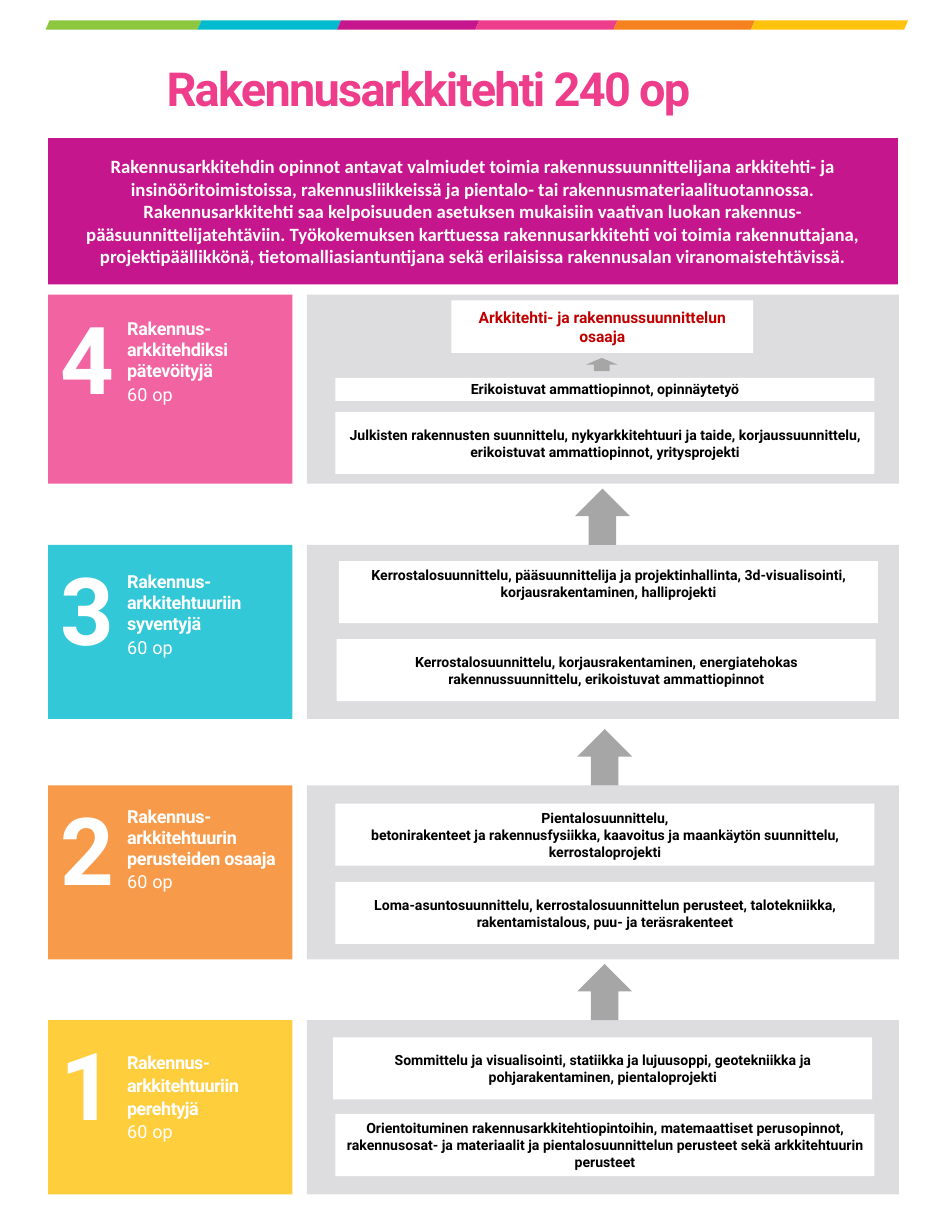
import lxml.etree
import pptx
import pptx.dml.color
import pptx.enum.shapes
import pptx.enum.text
import pptx.oxml.ns
import pptx.util

Cm, Pt = pptx.util.Cm, pptx.util.Pt
SHAPE = pptx.enum.shapes.MSO_SHAPE
ALIGN = pptx.enum.text.PP_ALIGN
ANCHOR = pptx.enum.text.MSO_ANCHOR
qn = pptx.oxml.ns.qn

COLORS = {
    "green": "8DC63F", "cyan": "00BBCE", "purple": "C6168D", "pink": "EE3D8A",
    "orange": "F5821F", "yellow": "FFC20D", "panel": "DDDDDF", "arrow": "A6A6A6",
    "white": "FFFFFF", "black": "000000", "red": "C00000",
}
# Font, colour, letter spacing in hundredths of a point, paragraph format
STYLES = {
    "title": (dict(name="Roboto", size=Pt(30), bold=True), "pink", -110,
              dict(alignment=ALIGN.LEFT)),
    "intro": (dict(name="Calibri", size=Pt(12), bold=True), "white", 0,
              dict(alignment=ALIGN.CENTER)),
    "goal": (dict(name="Roboto", size=Pt(10), bold=True), "red", 0,
             dict(alignment=ALIGN.CENTER)),
    "course": (dict(name="Roboto", size=Pt(9), bold=True), "black", 0,
               dict(alignment=ALIGN.CENTER)),
    "number": (dict(name="Roboto", size=Pt(60), bold=True), "white", -220,
               dict(line_spacing=Pt(70.4))),
    "role": (dict(name="Roboto", size=Pt(11.5), bold=True), "white", -20,
             dict(line_spacing=Pt(13.4))),
    "credits": (dict(name="Roboto", size=Pt(11.5), bold=False), "white", 10,
                dict(line_spacing=Pt(13.5), space_before=Pt(1.8))),
    "first role": (dict(name="Roboto", size=Pt(11.5), bold=True), "white", -30,
                   dict(line_spacing=1.07)),
    "first credits": (dict(name="Roboto", size=Pt(11.5), bold=False), "white", 10,
                      dict(line_spacing=1.07)),
}

deck = pptx.Presentation()
deck.slide_width, deck.slide_height = Cm(21.49), Cm(27.81)
slide = deck.slides.add_slide(deck.slide_layouts[5])


def add_block(kind, box, color, alpha=None):
    block = slide.shapes.add_shape(kind, *map(Cm, box))
    block.shadow.inherit = False
    block.fill.solid()
    block.fill.fore_color.rgb = pptx.dml.color.RGBColor.from_string(COLORS[color])
    block.line.fill.background()
    if alpha:
        tint = block._element.spPr.find(".//" + qn("a:srgbClr"))
        lxml.etree.SubElement(tint, qn("a:alpha")).set("val", str(alpha * 1000))
    return block


def write(frame, lines, **frame_format):
    for key, value in dict(word_wrap=True, **frame_format).items():
        setattr(frame, key, value)
    for i, (text, style) in enumerate(lines):
        font_format, color, spacing, paragraph_format = STYLES[style]
        paragraph = frame.add_paragraph() if i else frame.paragraphs[0]
        for key, value in paragraph_format.items():
            setattr(paragraph, key, value)
        run = paragraph.add_run()
        run.text = text
        for key, value in font_format.items():
            setattr(run.font, key, value)
        run.font.color.rgb = pptx.dml.color.RGBColor.from_string(COLORS[color])
        if spacing:
            run._r.get_or_add_rPr().set("spc", str(spacing))


FLUSH = dict(margin_left=0, margin_top=0, margin_right=0, margin_bottom=0,
             vertical_anchor=ANCHOR.TOP,
             auto_size=pptx.enum.text.MSO_AUTO_SIZE.NONE)

# Title
title = slide.shapes.title
title.left, title.top, title.width, title.height = map(Cm, (3.76, 1.35, 15.67, 1.27))
write(title.text_frame, [("Rakennusarkkitehti 240 op", "title")], **FLUSH)

# Slanted colour band
SLANT, BAND_TOP, BAND_BOTTOM = 0.09, 0.46, 0.67
band_edges = [1.12, 4.55, 7.7, 10.82, 13.94, 17.04, 20.5]
band_colors = ["green", "cyan", "purple", "pink", "orange", "yellow"]
for start, end, color in zip(band_edges, band_edges[1:], band_colors):
    outline = slide.shapes.build_freeform(Cm(start), Cm(BAND_TOP))
    outline.add_line_segments([(Cm(end), Cm(BAND_TOP)),
                               (Cm(end - SLANT), Cm(BAND_BOTTOM)),
                               (Cm(start - SLANT), Cm(BAND_BOTTOM))])
    stripe = outline.convert_to_shape()
    stripe.shadow.inherit = False
    stripe.fill.solid()
    stripe.fill.fore_color.rgb = pptx.dml.color.RGBColor.from_string(COLORS[color])
    stripe.line.fill.background()

# Introduction
intro = add_block(SHAPE.RECTANGLE, (1.09, 3.12, 19.18, 3.3), "purple")
write(intro.text_frame, [(
    "Rakennusarkkitehdin opinnot antavat valmiudet toimia rakennussuunnittelijana "
    "arkkitehti- ja insinööritoimistoissa, rakennusliikkeissä ja pientalo- tai "
    "rakennusmateriaalituotannossa. Rakennusarkkitehti saa kelpoisuuden asetuksen "
    "mukaisiin vaativan luokan rakennus- pääsuunnittelijatehtäviin. Työkokemuksen "
    "karttuessa rakennusarkkitehti voi toimia rakennuttajana, projektipäällikkönä, "
    "tietomalliasiantuntijana sekä erilaisissa rakennusalan viranomaistehtävissä.",
    "intro")], vertical_anchor=ANCHOR.MIDDLE)

# Study years: number, colour, top, height, label top, role
years = [
    ("4", "pink", 6.65, 4.27, 7.19, "Rakennus-arkkitehdiksi pätevöityjä"),
    ("3", "cyan", 12.3, 3.93, 12.9, "Rakennus-arkkitehtuuriin syventyjä"),
    ("2", "orange", 17.73, 3.93, 18.19, "Rakennus-arkkitehtuurin perusteiden osaaja"),
    ("1", "yellow", 23.03, 3.93, 23.7, "Rakennus-arkkitehtuuriin perehtyjä"),
]
for number, color, top, height, label_top, role in years:
    add_block(SHAPE.RECTANGLE, (6.93, top, 13.36, height), "panel")
    add_block(SHAPE.RECTANGLE, (1.09, top, 5.51, height), color, alpha=80)
    prefix = "first " if number == "1" else ""
    year_number = slide.shapes.add_textbox(*map(Cm, (1.37, top + 0.2, 1.24, 2.49)))
    write(year_number.text_frame, [(number, "number")], **FLUSH)
    year_label = slide.shapes.add_textbox(*map(Cm, (2.87, label_top, 3.63, 1.96)))
    write(year_label.text_frame,
          [(role, prefix + "role"), ("60 op", prefix + "credits")], **FLUSH)

# Arrows, each standing on the panel below it
ARROW_WIDTH, ARROW_HEIGHT = 1.24, 1.27
for left, year in zip((12.98, 13.03, 13.03), years[1:]):
    add_block(SHAPE.UP_ARROW,
              (left, year[2] - ARROW_HEIGHT, ARROW_WIDTH, ARROW_HEIGHT), "arrow")
add_block(SHAPE.UP_ARROW, (13.23, 8.08, 0.71, 0.3), "arrow")

# Final competence
goal = add_block(SHAPE.RECTANGLE, (10.19, 6.78, 6.81, 1.19), "white")
write(goal.text_frame, [("Arkkitehti- ja rakennussuunnittelun osaaja", "goal")],
      vertical_anchor=ANCHOR.MIDDLE)

# Course boxes: left, top, height, anchor, paragraphs
courses = [
    (7.57, 8.53, 0.52, ANCHOR.MIDDLE, ["Erikoistuvat ammattiopinnot, opinnäytetyö"]),
    (7.57, 9.3, 1.4, ANCHOR.MIDDLE, [
        "Julkisten rakennusten suunnittelu, nykyarkkitehtuuri ja taide, "
        "korjaussuunnittelu, erikoistuvat ammattiopinnot, yritysprojekti"]),
    (7.65, 12.67, 1.4, ANCHOR.TOP, [
        "Kerrostalosuunnittelu, pääsuunnittelija ja projektinhallinta, "
        "3d-visualisointi, korjausrakentaminen, halliprojekti"]),
    (7.6, 14.43, 1.4, ANCHOR.MIDDLE, [
        "Kerrostalosuunnittelu, korjausrakentaminen, energiatehokas "
        "rakennussuunnittelu, erikoistuvat ammattiopinnot"]),
    (7.57, 18.14, 1.4, ANCHOR.MIDDLE, [
        "Pientalosuunnittelu,",
        "betonirakenteet ja rakennusfysiikka, kaavoitus ja maankäytön "
        "suunnittelu, kerrostaloprojekti"]),
    (7.57, 19.91, 1.4, ANCHOR.MIDDLE, [
        "Loma-asuntosuunnittelu, kerrostalosuunnittelun perusteet, "
        "talotekniikka, rakentamistalous, puu- ja teräsrakenteet"]),
    (7.52, 23.42, 1.4, ANCHOR.MIDDLE, [
        "Sommittelu ja visualisointi, statiikka ja lujuusoppi, geotekniikka ja "
        "pohjarakentaminen, pientaloprojekti"]),
    (7.57, 25.15, 1.4, ANCHOR.MIDDLE, [
        "Orientoituminen rakennusarkkitehtiopintoihin, matemaattiset perusopinnot, "
        "rakennusosat- ja materiaalit ja pientalosuunnittelun perusteet sekä "
        "arkkitehtuurin perusteet"]),
]
for left, top, height, anchor, paragraphs in courses:
    course = add_block(SHAPE.RECTANGLE, (left, top, 12.17, height), "white")
    write(course.text_frame, [(text, "course") for text in paragraphs],
          vertical_anchor=anchor)

deck.save("out.pptx")
